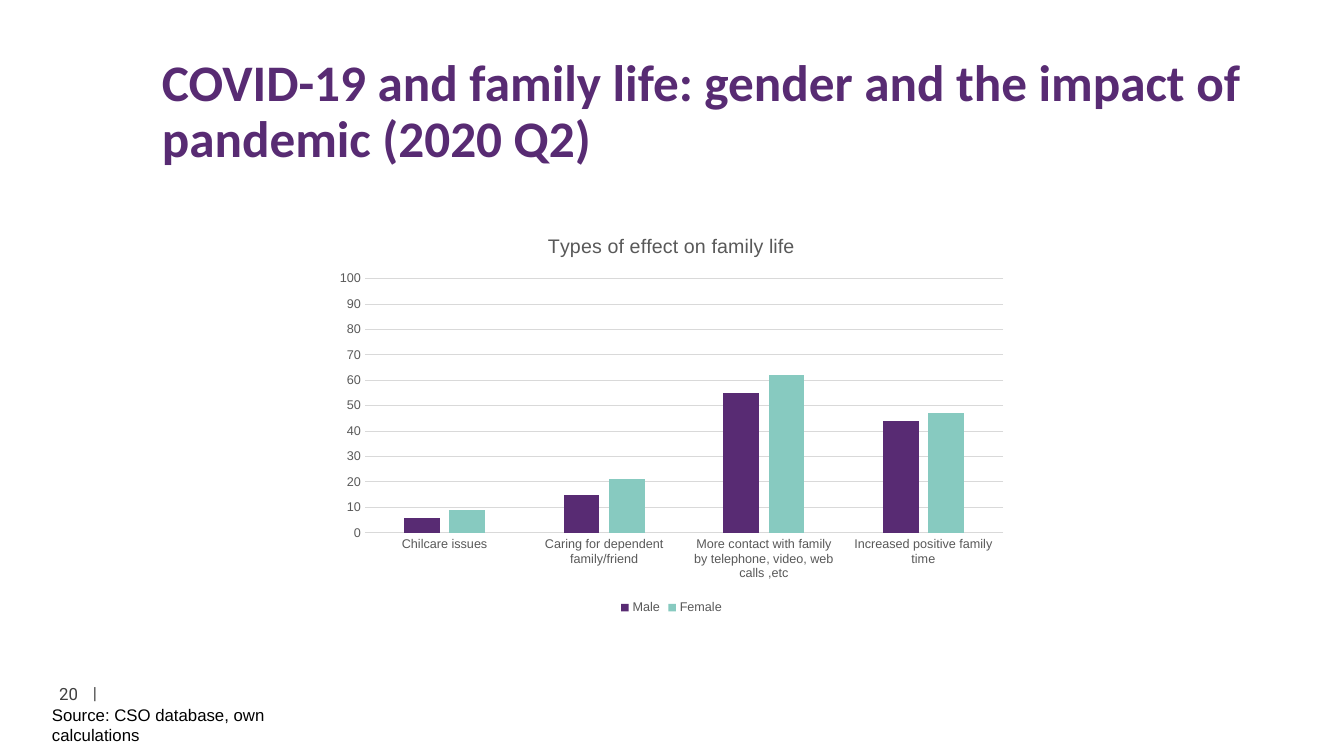
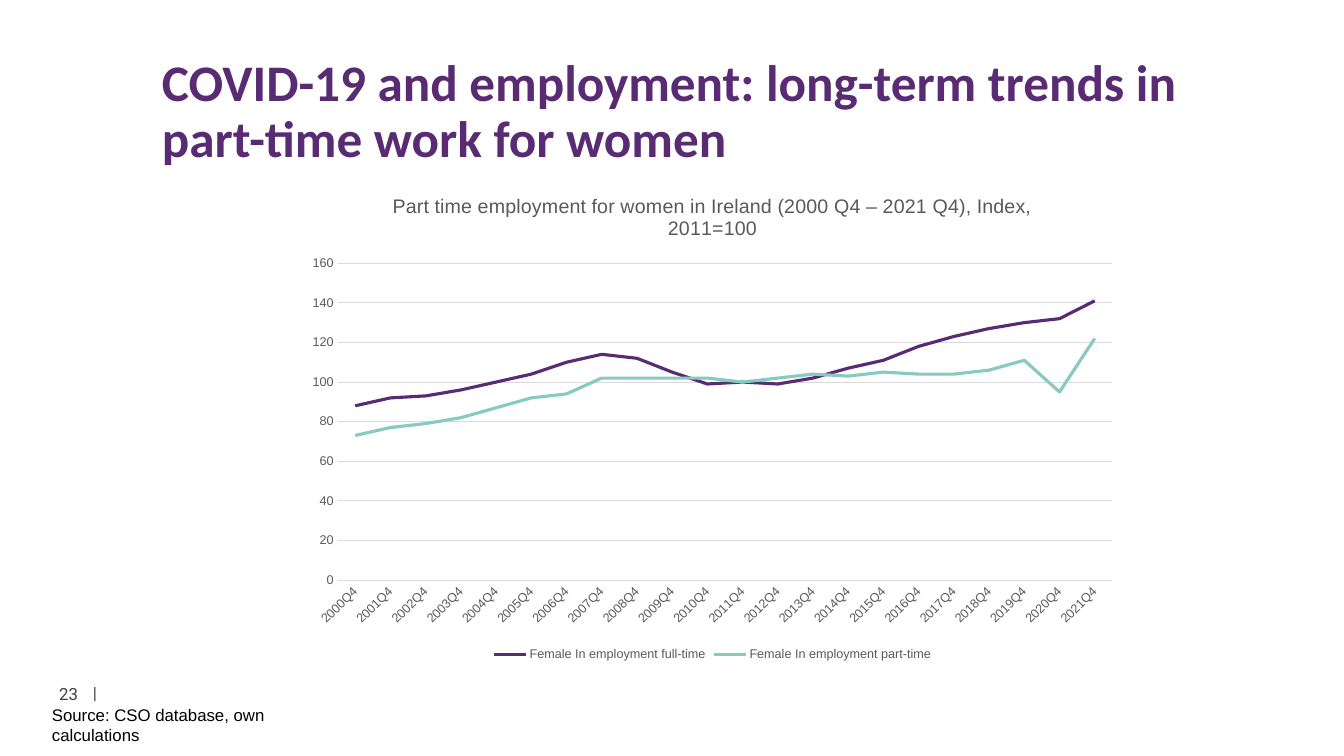
from pptx import Presentation
from pptx.chart.data import CategoryChartData
from pptx.dml.color import RGBColor
from pptx.enum.chart import XL_CHART_TYPE, XL_LEGEND_POSITION, XL_TICK_MARK
from pptx.enum.text import MSO_ANCHOR, PP_ALIGN
from pptx.util import Emu, Pt

PURPLE = RGBColor(0x58, 0x2B, 0x73)
TEAL = RGBColor(0x87, 0xCA, 0xC0)
DARK = RGBColor(0x3F, 0x3F, 0x3F)
GREY = RGBColor(0x59, 0x59, 0x59)
PALE = RGBColor(0xD9, 0xD9, 0xD9)
BLACK = RGBColor(0, 0, 0)

BARS = XL_CHART_TYPE.COLUMN_CLUSTERED
LINES = XL_CHART_TYPE.LINE
BOTTOM = XL_LEGEND_POSITION.BOTTOM
NO_TICK = XL_TICK_MARK.NONE
TOP, MIDDLE = MSO_ANCHOR.TOP, MSO_ANCHOR.MIDDLE
LEFT, RIGHT = PP_ALIGN.LEFT, PP_ALIGN.RIGHT

WIDE, HIGH = 1344, 756
SCALE = 12192000 / WIDE


def place(*lengths):
    return [Emu(round(n * SCALE)) for n in lengths]


def style(font, name, size, color, bold=False):
    font.name = name
    font.size = Pt(size)
    font.color.rgb = color
    font.bold = bold


SLIDES = [
    {
        "title": "COVID-19 and family life: gender and the impact of pandemic (2020 Q2)",
        "page": "20",
        "kind": BARS,
        "box": (326, 216, 691, 403),
        "head": "Types of effect on family life",
        "top": 100,
        "step": 10,
        "cats": [
            "Chilcare issues",
            "Caring for dependent family/friend",
            "More contact with family by telephone, video, web calls ,etc",
            "Increased positive family time",
        ],
        "rows": {"Male": [6, 15, 55, 44], "Female": [9, 21, 62, 47]},
    },
    {
        "title": "COVID-19 and employment: long-term trends in part-time work for women",
        "page": "23",
        "kind": LINES,
        "box": (296, 175, 833, 491),
        "head": "Part time employment for women in Ireland (2000 Q4 – 2021 Q4), Index, 2011=100",
        "top": 160,
        "step": 20,
        "cats": [f"{year}Q4" for year in range(2000, 2022)],
        "rows": {
            "Female In employment full-time": [
                88, 92, 93, 96, 100, 104, 110, 114, 112, 105, 99,
                100, 99, 102, 107, 111, 118, 123, 127, 130, 132, 141],
            "Female In employment part-time": [
                73, 77, 79, 82, 87, 92, 94, 102, 102, 102, 102,
                100, 102, 104, 103, 105, 104, 104, 106, 111, 95, 122],
        },
    },
]

deck = Presentation()
deck.slide_width, deck.slide_height = place(WIDE, HIGH)
blank = deck.slide_layouts[6]

for item in SLIDES:
    slide = deck.slides.add_slide(blank)

    texts = [
        (item["title"], (152, 39, 1123, 148), "Calibri", 36.6, PURPLE, True, MIDDLE, LEFT, 0.9),
        (item["page"], (35, 677, 53, 34), "Roboto", 12, DARK, False, MIDDLE, RIGHT, 1),
        ("|", (83, 678, 24, 30), "Roboto", 12, DARK, False, TOP, LEFT, 1),
        ("Source: CSO database, own calculations", (42, 700, 236, 50),
         "Arial", 12, BLACK, False, TOP, LEFT, 1),
    ]
    for words, box, face, size, color, bold, anchor, align, space in texts:
        frame = slide.shapes.add_textbox(*place(*box)).text_frame
        frame.word_wrap = True
        frame.vertical_anchor = anchor
        frame.text = words
        line = frame.paragraphs[0]
        line.alignment = align
        line.line_spacing = space
        style(line.runs[0].font, face, size, color, bold)

    data = CategoryChartData()
    data.categories = item["cats"]
    for name, vals in item["rows"].items():
        data.add_series(name, vals)
    chart = slide.shapes.add_chart(item["kind"], *place(*item["box"]), data).chart
    style(chart.font, "Arial", 10, BLACK)

    chart.has_title = True
    head = chart.chart_title.text_frame
    head.text = item["head"]
    style(head.paragraphs[0].runs[0].font, "Arial", 14, GREY)
    chart.chart_title.include_in_layout = False

    chart.has_legend = True
    chart.legend.position = BOTTOM
    chart.legend.include_in_layout = False
    style(chart.legend.font, "Arial", 9, GREY)

    across, up = chart.category_axis, chart.value_axis
    for axis in (across, up):
        axis.major_tick_mark = NO_TICK
        axis.minor_tick_mark = NO_TICK
        style(axis.tick_labels.font, "Arial", 9, GREY)
    up.minimum_scale = 0
    up.maximum_scale = item["top"]
    up.major_unit = item["step"]
    up.format.line.fill.background()
    for rule in (across.format.line, up.major_gridlines.format.line):
        rule.color.rgb = PALE
        rule.width = Pt(0.75)

    plot = chart.plots[0]
    plot.vary_by_categories = False
    if item["kind"] == BARS:
        plot.gap_width = 219
        plot.overlap = -27
    else:
        for body in chart.element.xpath("//c:catAx/c:txPr/a:bodyPr"):
            body.set("rot", "-2700000")
    for row, color in zip(plot.series, (PURPLE, TEAL)):
        if item["kind"] == BARS:
            row.format.fill.solid()
            row.format.fill.fore_color.rgb = color
        else:
            row.smooth = False
            row.format.line.color.rgb = color
            row.format.line.width = Pt(2.25)

deck.save("out.pptx")
